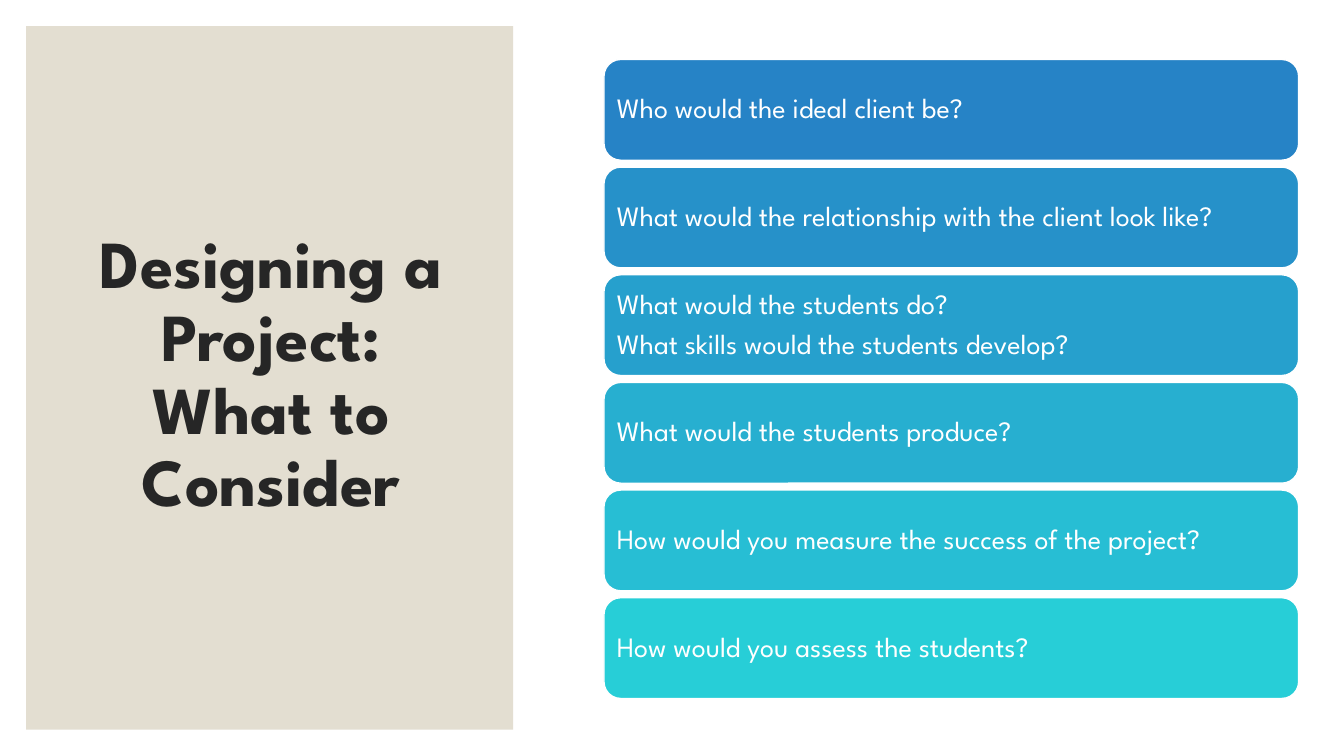
"""Build the slide of questions to consider when designing a project."""
from pptx import Presentation
from pptx.dml.color import RGBColor
from pptx.enum.shapes import MSO_SHAPE as Shape
from pptx.enum.text import MSO_ANCHOR as Anchor, MSO_AUTO_SIZE as AutoSize, PP_ALIGN as Align
from pptx.util import Emu, Pt

FONT = "League Spartan"
TITLE = "Designing a Project:\vWhat to Consider"
CARDS = [
    ("2683C6", ["Who would the ideal client be?"]),
    ("2691C9", ["What would the relationship with the client look like?"]),
    ("26A0CD", ["What would the students do?", "What skills would the students develop?"]),
    ("27AFD0", ["What would the students produce?"]),
    ("27BED4", ["How would you measure the success of the project?"]),
    ("27CED7", ["How would you assess the students?"]),
]
SLIDE = (1333, 750)
PANEL = (26, 26, 483, 698)
TITLE_BOX = (63, 61, 412, 624)
CARD_LEFT, CARD_WIDTH, CARD_HEIGHT = 599, 689, 100
FIRST_TOP, LAST_TOP = 59, 593
CARD_INSET = 8


def px(length):
    return Emu(round(length * 9144))


def color(code):
    return RGBColor.from_string(code)


def write(box, lines, *, size, ink, bold=False, align=Align.LEFT, after=0):
    frame = box.text_frame
    frame.word_wrap = True
    frame.auto_size = AutoSize.NONE
    frame.vertical_anchor = Anchor.MIDDLE
    for index, line in enumerate(lines):
        para = frame.add_paragraph() if index else frame.paragraphs[0]
        para.text = line
        para.alignment = align
        para.line_spacing = 0.9
        para.space_before = Pt(0)
        para.space_after = Pt(after)
        for span in para.runs:
            span.font.name = FONT
            span.font.size = Pt(size)
            span.font.bold = bold
            span.font.color.rgb = color(ink)


def add_block(page, kind, place, fill, line=None):
    block = page.shapes.add_shape(kind, *map(px, place))
    block.shadow.inherit = False
    block.fill.solid()
    block.fill.fore_color.rgb = color(fill)
    if line:
        block.line.color.rgb = color(line)
        block.line.width = Pt(1)
    else:
        block.line.fill.background()
    return block


def add_title(page):
    title = page.shapes.title
    title.left, title.top, title.width, title.height = map(px, TITLE_BOX)
    write(title, [TITLE], size=48, ink="262626", bold=True, align=Align.CENTER)
    page.shapes._spTree.append(title._element)


def add_cards(page):
    pitch = (LAST_TOP - FIRST_TOP) / (len(CARDS) - 1)
    for index, (fill, lines) in enumerate(CARDS):
        place = (CARD_LEFT, FIRST_TOP + index * pitch, CARD_WIDTH, CARD_HEIGHT)
        card = add_block(page, Shape.ROUNDED_RECTANGLE, place, fill, line="FFFFFF")
        frame = card.text_frame
        frame.margin_left = frame.margin_right = px(CARD_INSET)
        frame.margin_top = frame.margin_bottom = px(CARD_INSET)
        write(card, lines, size=20, ink="FFFFFF", after=7)


def main():
    deck = Presentation()
    deck.slide_width, deck.slide_height = map(px, SLIDE)
    page = deck.slides.add_slide(deck.slide_layouts[5])
    page.background.fill.solid()
    page.background.fill.fore_color.rgb = color("FFFFFF")
    add_block(page, Shape.RECTANGLE, PANEL, "E3DED1")
    add_title(page)
    add_cards(page)
    deck.save("out.pptx")


if __name__ == "__main__":
    main()
